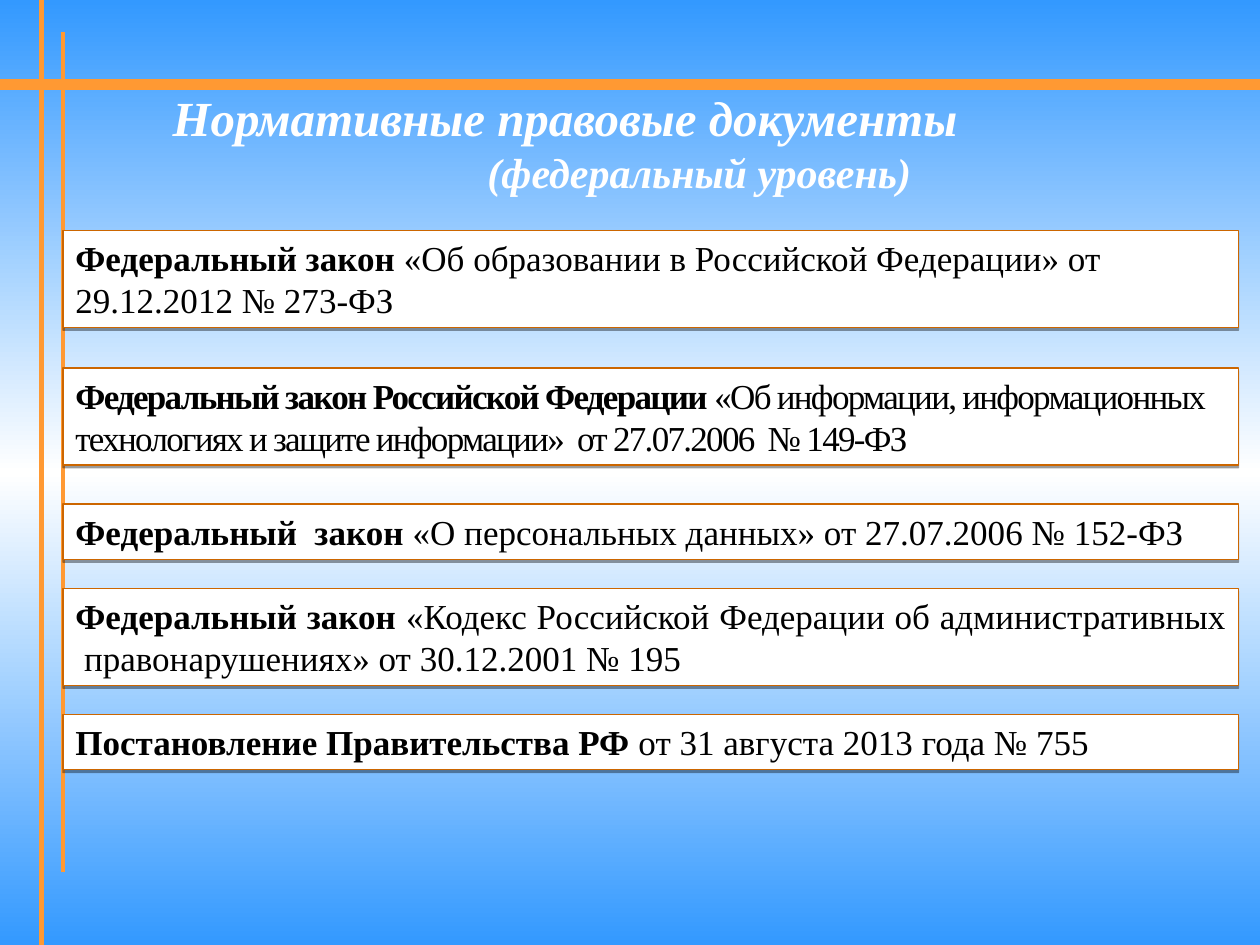
from dataclasses import dataclass

from lxml import etree
from pptx import Presentation
from pptx.dml.color import RGBColor
from pptx.enum.shapes import MSO_CONNECTOR, MSO_SHAPE
from pptx.enum.text import MSO_ANCHOR, MSO_AUTO_SIZE, PP_ALIGN
from pptx.oxml.ns import qn
from pptx.util import Inches, Pt

STRAIGHT, RECT = MSO_CONNECTOR.STRAIGHT, MSO_SHAPE.RECTANGLE
TOP, MIDDLE = MSO_ANCHOR.TOP, MSO_ANCHOR.MIDDLE
LEFT, CENTER, JUSTIFY = PP_ALIGN.LEFT, PP_ALIGN.CENTER, PP_ALIGN.JUSTIFY
NO_FIT, GROW = MSO_AUTO_SIZE.NONE, MSO_AUTO_SIZE.SHAPE_TO_FIT_TEXT


@dataclass(frozen=True)
class Theme:
    font: str = "Times New Roman"
    sky: str = "3399FF"
    white: str = "FFFFFF"
    black: str = "000000"
    rule: str = "FF9933"
    border: str = "CC6600"
    title: int = 28
    subtitle: int = 24
    body: int = 20


THEME = Theme()
ONE_LINE, TWO_LINES = 0.44, 0.77
RULES = [
    (0, 0.67, 10, 0.67, 6),
    (0.33, 0, 0.33, 7.5, 3),
    (0.5, 0.25, 0.5, 6.92, 2.25),
]
LAWS = [
    (1.83, TWO_LINES, LEFT, 0, "Федеральный закон ",
     "«Об образовании в Российской Федерации» от 29.12.2012 № 273-ФЗ"),
    (2.92, TWO_LINES, LEFT, -1, "Федеральный закон Российской Федерации ",
     "«Об информации, информационных технологиях и защите информации»  "
     "от 27.07.2006  № 149-ФЗ"),
    (4, ONE_LINE, LEFT, 0, "Федеральный  закон ",
     "«О персональных данных» от 27.07.2006 № 152-ФЗ"),
    (4.67, TWO_LINES, JUSTIFY, 0, "Федеральный закон ",
     "«Кодекс Российской Федерации об административных  "
     "правонарушениях» от 30.12.2001 № 195"),
    (5.67, ONE_LINE, LEFT, 0, "Постановление Правительства РФ ",
     "от 31 августа 2013 года № 755"),
]


def rgb(color):
    return RGBColor.from_string(color)


def add_run(p, text, size, color, bold=False, italic=False, spacing=0):
    r = p.add_run()
    r.text = text
    r.font.name = THEME.font
    r.font.size = Pt(size)
    r.font.bold = bold
    r.font.italic = italic
    r.font.color.rgb = rgb(color)
    if spacing:
        r.font._element.set("spc", str(spacing * 100))


def set_background(s):
    fill = s.background.fill
    fill.gradient()
    fill.gradient_angle = 90
    stops = s._element.find(".//" + qn("a:gsLst"))
    for stop in list(stops):
        stops.remove(stop)
    for pos, color in ((0, THEME.sky), (50, THEME.white), (100, THEME.sky)):
        stop = etree.SubElement(stops, qn("a:gs"), pos=str(pos * 1000))
        etree.SubElement(stop, qn("a:srgbClr"), val=color)


def add_rule(s, x1, y1, x2, y2, width):
    line = s.shapes.add_connector(
        STRAIGHT, Inches(x1), Inches(y1), Inches(x2), Inches(y2))
    line.line.color.rgb = rgb(THEME.rule)
    line.line.width = Pt(width)
    etree.SubElement(line._element.spPr, qn("a:effectLst"))


def add_title(s, x, y, w, h):
    sp = s.shapes.title
    sp.left, sp.top, sp.width, sp.height = map(Inches, (x, y, w, h))
    tf = sp.text_frame
    tf.auto_size = NO_FIT
    tf.vertical_anchor = MIDDLE
    p = tf.paragraphs[0]
    p.alignment = LEFT
    p._p.get_or_add_pPr().set("marL", str(Inches(0.68)))
    add_run(p, "Нормативные правовые документы", THEME.title, THEME.white, True, True)
    p = tf.add_paragraph()
    p.alignment = CENTER
    add_run(p, "(федеральный уровень)", THEME.subtitle, THEME.white, True, True)


def add_shadow(sp):
    sp.shadow.inherit = False
    effects = sp._element.spPr.find(qn("a:effectLst"))
    shadow = etree.SubElement(
        effects, qn("a:outerShdw"), blurRad="0", dist=str(Pt(1.6)),
        dir="5400000", rotWithShape="0")
    color = etree.SubElement(shadow, qn("a:srgbClr"), val=THEME.black)
    etree.SubElement(color, qn("a:alpha"), val="38000")


def add_law(s, x, y, w, h, align, spacing, kind, name):
    sp = s.shapes.add_shape(RECT, Inches(x), Inches(y), Inches(w), Inches(h))
    sp.fill.solid()
    sp.fill.fore_color.rgb = rgb(THEME.white)
    sp.line.color.rgb = rgb(THEME.border)
    sp.line.width = Pt(0.75)
    add_shadow(sp)
    tf = sp.text_frame
    tf.word_wrap = True
    tf.auto_size = GROW
    tf.vertical_anchor = TOP
    p = tf.paragraphs[0]
    p.alignment = align
    add_run(p, kind, THEME.body, THEME.black, bold=True, spacing=spacing)
    add_run(p, name, THEME.body, THEME.black, spacing=spacing)


def add_laws(s, x, w):
    for y, h, *law in LAWS:
        add_law(s, x, y, w, h, *law)


def main():
    prs = Presentation()
    prs.slide_width, prs.slide_height = Inches(10), Inches(7.5)
    s = prs.slides.add_slide(prs.slide_layouts[5])
    set_background(s)
    for rule in RULES:
        add_rule(s, *rule)
    add_title(s, 0.59, 0.67, 9.24, 0.92)
    add_laws(s, 0.5, 9.33)
    prs.save("out.pptx")


if __name__ == "__main__":
    main()
